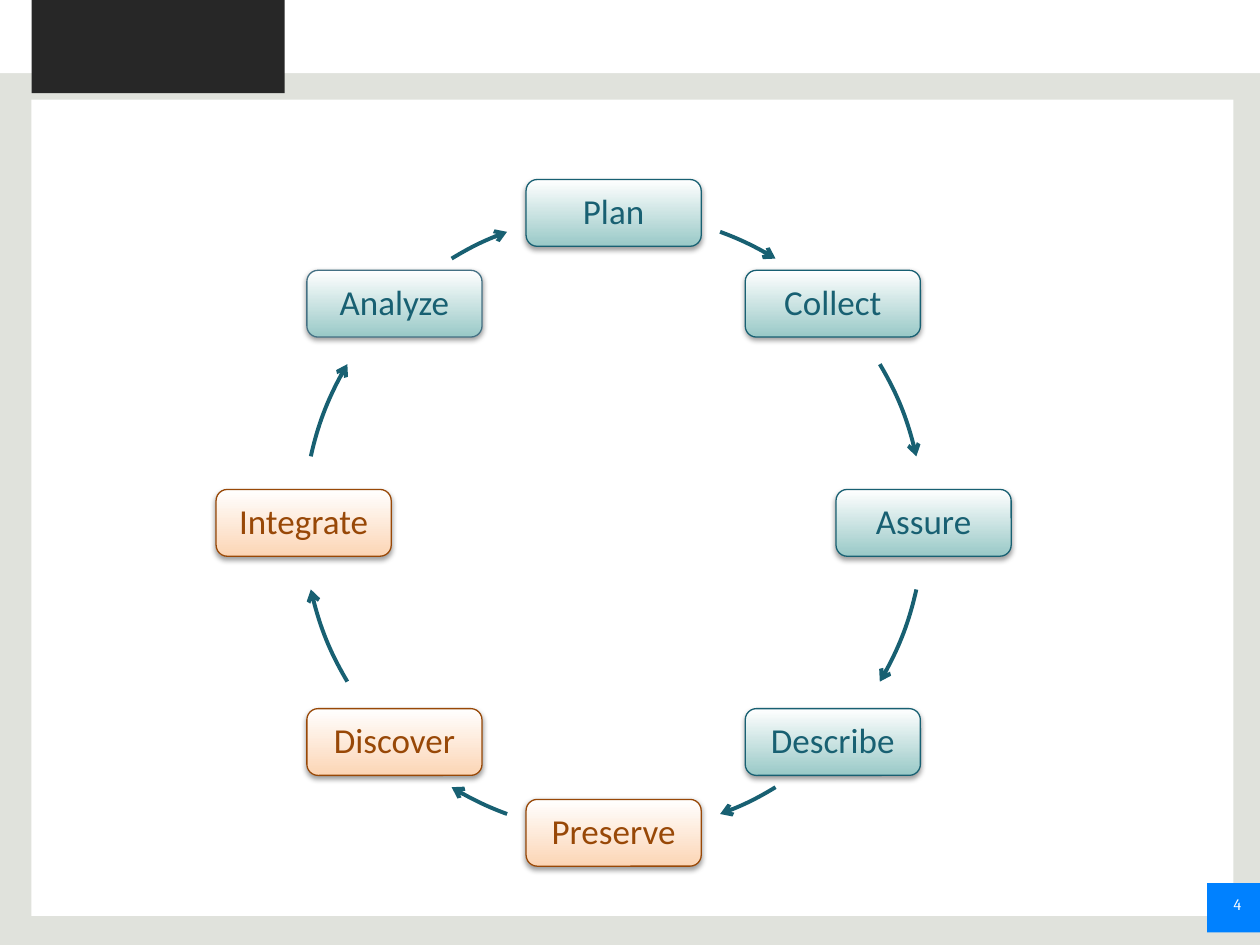
"""Build a slide showing the data life cycle as a ring of eight steps."""
import math

import pptx
import pptx.dml.color
import pptx.enum.shapes
import pptx.enum.text
import pptx.oxml
import pptx.oxml.ns
import pptx.util

Inches = pptx.util.Inches
Pt = pptx.util.Pt
RGBColor = pptx.dml.color.RGBColor
SHAPE = pptx.enum.shapes.MSO_SHAPE
ALIGN = pptx.enum.text.PP_ALIGN
MIDDLE = pptx.enum.text.MSO_ANCHOR.MIDDLE

SAGE = RGBColor(0xE0, 0xE2, 0xDC)
WHITE = RGBColor(0xFF, 0xFF, 0xFF)
CHARCOAL = RGBColor(0x27, 0x27, 0x27)
BLUE = RGBColor(0x00, 0x81, 0xFF)
TEAL = RGBColor(0x18, 0x60, 0x72)
SLATE = RGBColor(0x45, 0x71, 0x84)
PALE_TEAL = RGBColor(0x99, 0xC9, 0xC7)
BROWN = RGBColor(0x98, 0x48, 0x07)
PEACH = RGBColor(0xFC, 0xD5, 0xB5)

PANELS = [
    (0, 0, 10, 0.58, WHITE),
    (0.25, 0, 2.01, 0.74, CHARCOAL),
    (0.25, 0.79, 9.54, 6.48, WHITE),
    (9.58, 7.01, 0.42, 0.39, BLUE),
]
PAGE_NUMBER = "4"
STEPS = [
    ("Plan", TEAL, TEAL, PALE_TEAL),
    ("Collect", TEAL, TEAL, PALE_TEAL),
    ("Assure", TEAL, TEAL, PALE_TEAL),
    ("Describe", TEAL, TEAL, PALE_TEAL),
    ("Preserve", BROWN, BROWN, PEACH),
    ("Discover", BROWN, BROWN, PEACH),
    ("Integrate", BROWN, BROWN, PEACH),
    ("Analyze", TEAL, SLATE, PALE_TEAL),
]
HALF_TURN_ARCS = [(20.1, 31.5), (59.2, 77.6), (102.4, 120.8), (148.5, 159.9)]

CENTER_X, CENTER_Y, RADIUS = 4.87, 4.15, 2.46
STEP_WIDTH, STEP_HEIGHT = 1.39, 0.53
DRAWING_NS = pptx.oxml.ns.nsdecls("a")
SHADOW = (
    f'<a:outerShdw {DRAWING_NS} blurRad="40000" dist="20000" dir="5400000" rotWithShape="0">'
    '<a:srgbClr val="000000"><a:alpha val="38000"/></a:srgbClr></a:outerShdw>'
)
ARROWHEAD = f'<a:tailEnd {DRAWING_NS} type="arrow"/>'


def add_plain(slide, kind, left, top, width, height):
    shape = slide.shapes.add_shape(
        kind, Inches(left), Inches(top), Inches(width), Inches(height))
    shape.shadow.inherit = False
    return shape


def add_panel(slide, left, top, width, height, color):
    panel = add_plain(slide, SHAPE.RECTANGLE, left, top, width, height)
    panel.fill.solid()
    panel.fill.fore_color.rgb = color
    panel.line.fill.background()


def write(frame, text, font_name, size, color, alignment):
    frame.word_wrap = True
    frame.vertical_anchor = MIDDLE
    paragraph = frame.paragraphs[0]
    paragraph.alignment = alignment
    run = paragraph.add_run()
    run.text = text
    run.font.name = font_name
    run.font.size = Pt(size)
    run.font.color.rgb = color
    return paragraph


def add_step(slide, index, label, text_color, border, tint):
    angle = math.radians(index * 360 / len(STEPS))
    left = CENTER_X + RADIUS * math.sin(angle) - STEP_WIDTH / 2
    top = CENTER_Y - RADIUS * math.cos(angle) - STEP_HEIGHT / 2
    step = add_plain(slide, SHAPE.ROUNDED_RECTANGLE, left, top, STEP_WIDTH, STEP_HEIGHT)
    step.fill.gradient()
    step.fill.gradient_angle = 270
    for stop, color in zip(step.fill.gradient_stops, (WHITE, tint)):
        stop.color.rgb = color
    step.line.color.rgb = border
    step.line.width = Pt(0.75)
    effects = step._element.spPr.find(pptx.oxml.ns.qn("a:effectLst"))
    effects.append(pptx.oxml.parse_xml(SHADOW))
    frame = step.text_frame
    frame.margin_left = frame.margin_right = Inches(0.08)
    frame.margin_top = frame.margin_bottom = Inches(0.08)
    write(frame, label, "Calibri", 20, text_color, ALIGN.CENTER).line_spacing = 0.9


def add_arrow(slide, index):
    half_turn, position = divmod(index, len(HALF_TURN_ARCS))
    arrow = add_plain(slide, SHAPE.ARC, CENTER_X - RADIUS, CENTER_Y - RADIUS,
                      2 * RADIUS, 2 * RADIUS)
    for end, degrees in enumerate(HALF_TURN_ARCS[position]):
        arrow.adjustments[end] = (degrees + 180 * half_turn - 90) % 360 * 0.6
    arrow.fill.background()
    arrow.line.color.rgb = TEAL
    arrow.line.width = Pt(2.25)
    outline = arrow._element.spPr.find(pptx.oxml.ns.qn("a:ln"))
    outline.append(pptx.oxml.parse_xml(ARROWHEAD))


def main():
    deck = pptx.Presentation()
    deck.slide_width, deck.slide_height = Inches(10), Inches(7.5)
    slide = deck.slides.add_slide(deck.slide_layouts[6])
    slide.background.fill.solid()
    slide.background.fill.fore_color.rgb = SAGE
    for panel in PANELS:
        add_panel(slide, *panel)
    page = slide.shapes.add_textbox(Inches(9.38), Inches(7.08), Inches(0.57), Inches(0.2))
    write(page.text_frame, PAGE_NUMBER, "Cambria", 9, WHITE, ALIGN.RIGHT)
    for index, step in enumerate(STEPS):
        add_step(slide, index, *step)
        add_arrow(slide, index)
    deck.save("out.pptx")


if __name__ == "__main__":
    main()
